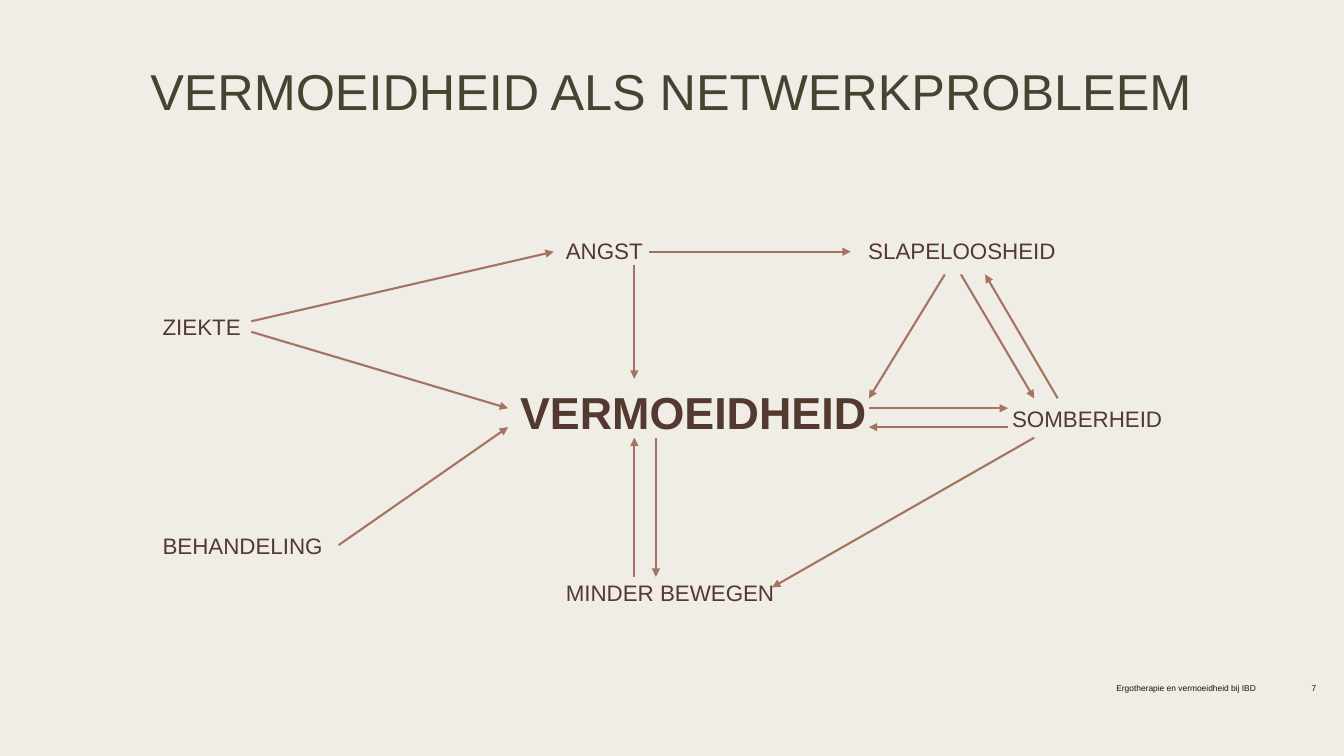
from lxml import etree
from pptx import Presentation
from pptx.dml.color import RGBColor
from pptx.enum.shapes import MSO_CONNECTOR
from pptx.enum.text import MSO_ANCHOR, MSO_AUTO_SIZE, PP_ALIGN
from pptx.oxml.ns import qn
from pptx.util import Inches, Pt

STRAIGHT = MSO_CONNECTOR.STRAIGHT
MIDDLE = MSO_ANCHOR.MIDDLE
FIXED_SIZE = MSO_AUTO_SIZE.NONE
LEFT, CENTER, RIGHT = PP_ALIGN.LEFT, PP_ALIGN.CENTER, PP_ALIGN.RIGHT
TITLE_ONLY = 5


def rgb(hex_code):
    return RGBColor.from_string(hex_code)


class NetworkSlide:
    """Holds the style and the slide; lengths are percentages of the slide's size."""

    FONT = "Arial"
    BACKGROUND = "F0EDE6"
    TITLE = "464331"
    LABEL = "533930"
    ARROW = "A57361"
    FOOTER = "131313"

    def __init__(self, deck):
        self.width, self.height = deck.slide_width, deck.slide_height
        self.slide = deck.slides.add_slide(deck.slide_layouts[TITLE_ONLY])
        fill = self.slide.background.fill
        fill.solid()
        fill.fore_color.rgb = rgb(self.BACKGROUND)

    def x(self, share):
        return round(self.width * share / 100)

    def y(self, share):
        return round(self.height * share / 100)

    def set_text(self, frame, text, size, color, align, bold=False):
        frame.text = text
        frame.word_wrap = True
        frame.auto_size = FIXED_SIZE
        frame.vertical_anchor = MIDDLE
        frame.margin_left = frame.margin_right = 0
        frame.margin_top = frame.margin_bottom = 0
        paragraph = frame.paragraphs[0]
        paragraph.alignment = align
        font = paragraph.runs[0].font
        font.name, font.size, font.bold = self.FONT, Pt(size), bold
        font.color.rgb = rgb(color)

    def title(self, text, left, top, width, height):
        heading = self.slide.shapes.title
        heading.left, heading.top = self.x(left), self.y(top)
        heading.width, heading.height = self.x(width), self.y(height)
        self.set_text(heading.text_frame, text, 36, self.TITLE, CENTER)

    def label(self, text, left, middle, width, size=16, bold=False,
              color=LABEL, align=LEFT):
        """Place one line of text, centred vertically on middle."""
        height = 8 if bold else 4
        box = self.slide.shapes.add_textbox(
            self.x(left), self.y(middle - height / 2), self.x(width), self.y(height))
        self.set_text(box.text_frame, text, size, color, align, bold)

    def footer(self, text, right, width):
        self.label(text, right - width, 91, width, 6, color=self.FOOTER, align=RIGHT)

    def arrow(self, start, end):
        link = self.slide.shapes.add_connector(
            STRAIGHT, self.x(start[0]), self.y(start[1]), self.x(end[0]), self.y(end[1]))
        link.line.width = Pt(1.5)
        link.line.color.rgb = rgb(self.ARROW)
        properties = link._element.spPr
        etree.SubElement(properties.find(qn("a:ln")), qn("a:tailEnd"), type="triangle")
        etree.SubElement(properties, qn("a:effectLst"))


FACTORS = [
    # text, left, middle, width
    ("ANGST", 42.1, 33.2, 7),
    ("SLAPELOOSHEID", 64.6, 33.2, 15),
    ("ZIEKTE", 12.1, 43.2, 7),
    ("SOMBERHEID", 75.3, 55.4, 12),
    ("BEHANDELING", 12.1, 72.1, 13),
    ("MINDER BEWEGEN", 42.1, 78.4, 17),
]

INFLUENCES = [
    ((18.7, 43.9), (37.8, 54)),      # ziekte > vermoeidheid
    ((25.2, 72.1), (37.8, 56.5)),    # behandeling > vermoeidheid
    ((18.7, 42.5), (41.2, 33.3)),    # ziekte > angst
    ((47.2, 35.1), (47.2, 50.1)),    # angst > vermoeidheid
    ((48.3, 33.3), (63.3, 33.3)),    # angst > slapeloosheid
    ((71.5, 36.3), (76.95, 52.7)),   # slapeloosheid > somberheid
    ((78.7, 52.7), (73.3, 36.3)),    # somberheid > slapeloosheid
    ((76.95, 57.9), (57.45, 77.7)),  # somberheid > minder bewegen
    ((47.2, 76.3), (47.2, 57.9)),    # minder bewegen > vermoeidheid
    ((48.8, 57.9), (48.8, 76.3)),    # vermoeidheid > minder bewegen
    ((75, 56.5), (64.65, 56.5)),     # somberheid > vermoeidheid
    ((70.3, 36.3), (64.65, 52.7)),   # slapeloosheid > vermoeidheid
    ((64.65, 54), (75, 54)),         # vermoeidheid > somberheid
]


def main():
    deck = Presentation()
    deck.slide_width, deck.slide_height = Inches(13.33), Inches(7.5)
    network = NetworkSlide(deck)
    network.title("VERMOEIDHEID ALS NETWERKPROBLEEM", 3.4, 6.5, 93.1, 11)
    for factor in FACTORS:
        network.label(*factor)
    network.label("VERMOEIDHEID", 38.7, 54.4, 27, size=32, bold=True)
    for start, end in INFLUENCES:
        network.arrow(start, end)
    network.footer("Ergotherapie en vermoeidheid bij IBD", 93.45, 20)
    network.footer("7", 97.95, 3)
    deck.save("out.pptx")


if __name__ == "__main__":
    main()
